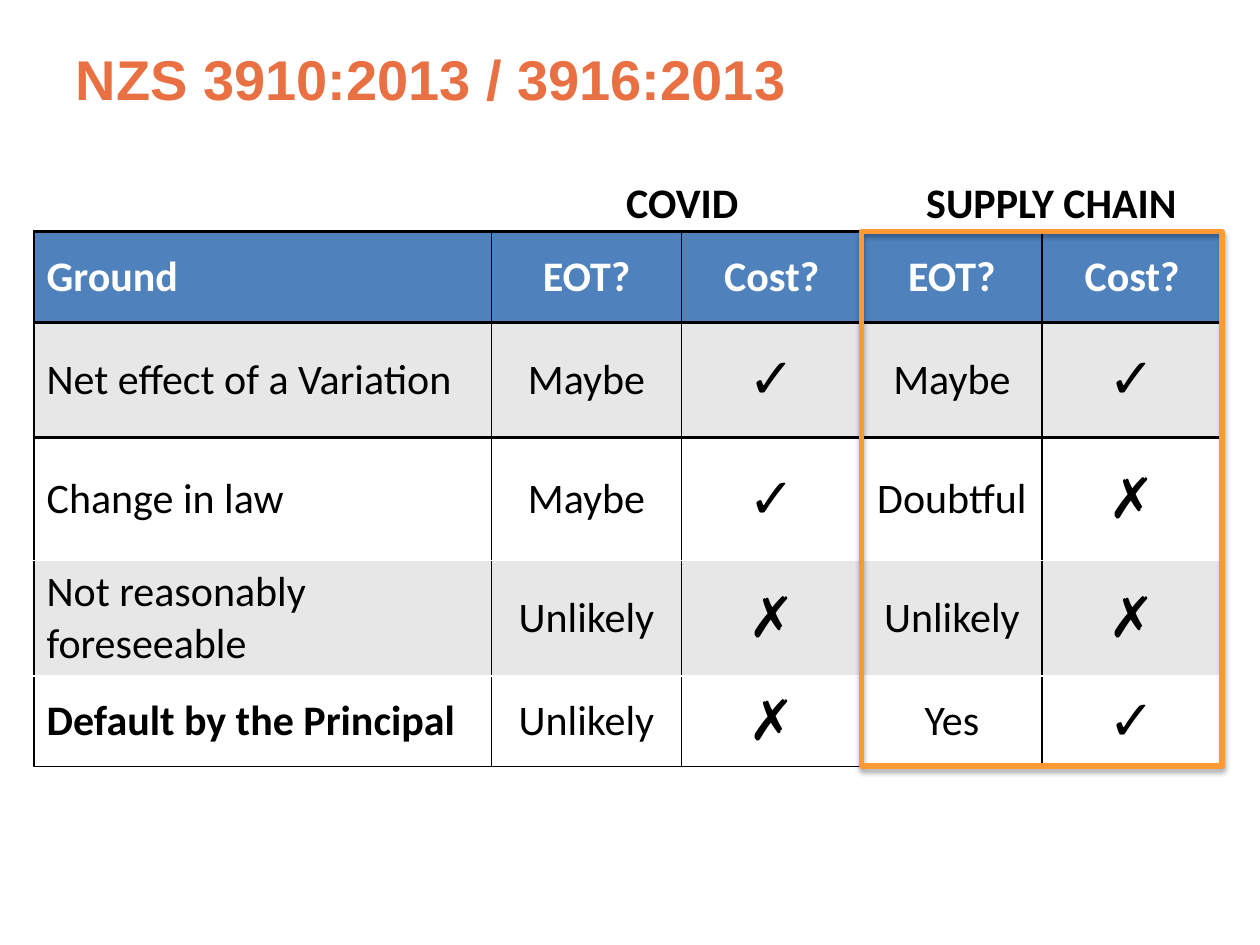
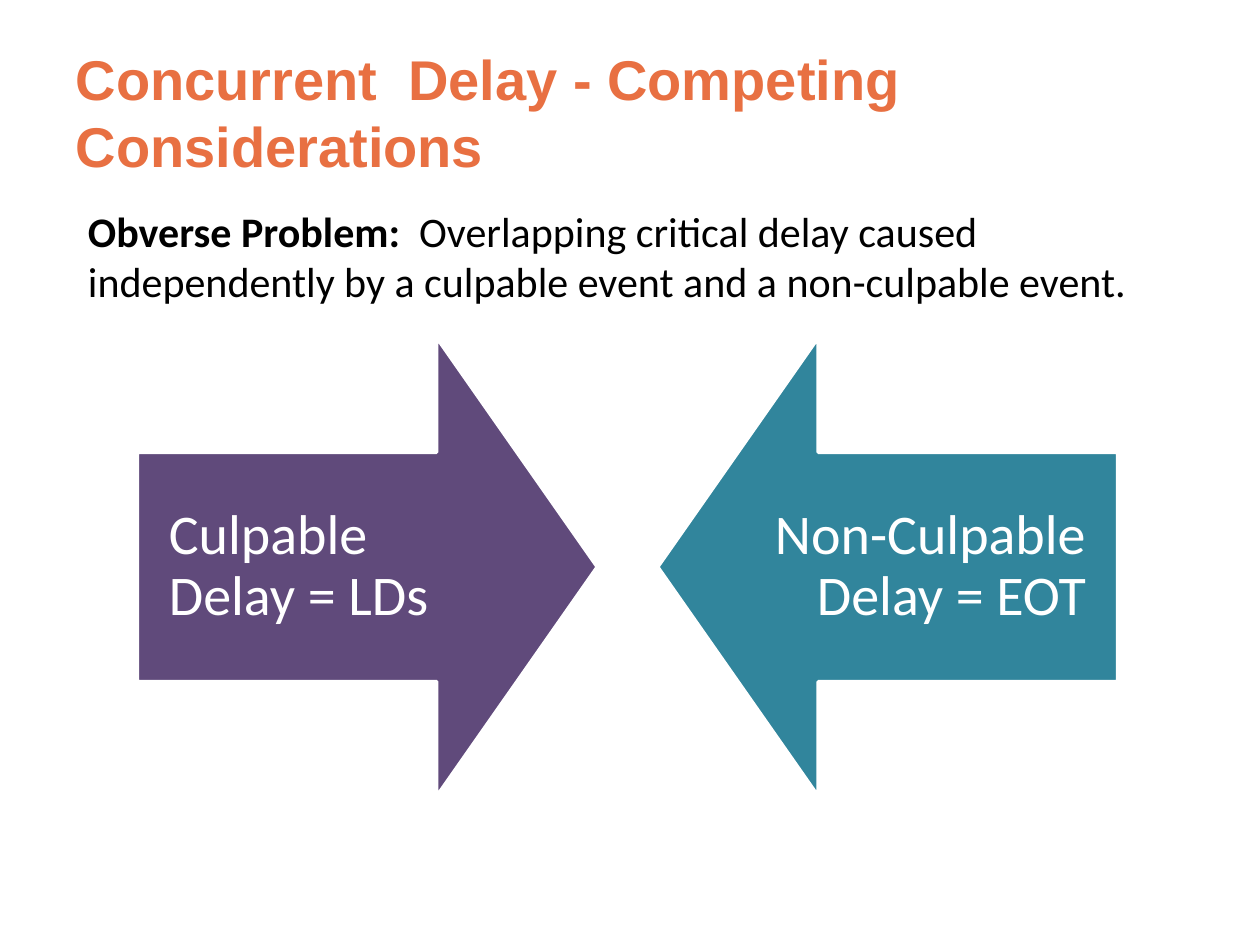
from lxml.etree import SubElement
from pptx import Presentation
from pptx.dml.color import RGBColor
from pptx.enum.shapes import MSO_SHAPE
from pptx.enum.text import MSO_ANCHOR, MSO_AUTO_SIZE, PP_ALIGN
from pptx.oxml.ns import qn
from pptx.util import Inches, Pt

ORANGE = RGBColor(0xE8, 0x70, 0x42)
FRAME_ORANGE = RGBColor(0xFF, 0x99, 0x33)
BLUE = RGBColor(0x4F, 0x81, 0xBD)
GREY = RGBColor(0xE7, 0xE7, 0xE7)
PURPLE = RGBColor(0x60, 0x4A, 0x7B)
TEAL = RGBColor(0x31, 0x85, 0x9C)
BLACK = RGBColor(0x00, 0x00, 0x00)
WHITE = RGBColor(0xFF, 0xFF, 0xFF)

presentation = Presentation()
presentation.slide_width = Inches(10)
presentation.slide_height = Inches(7.5)
COLUMN = presentation.slide_width // 100
ROW = presentation.slide_height // 75


def add_run(paragraph, text, size, color, bold=False, font="Calibri"):
    run = paragraph.add_run()
    run.text = text
    run.font.name = font
    run.font.size = Pt(size)
    run.font.bold = bold
    run.font.color.rgb = color


def add_titled_slide(text, rows):
    slide = presentation.slides.add_slide(presentation.slide_layouts[5])
    title = slide.shapes.title
    title.left, title.top = 5 * COLUMN, 3 * ROW
    title.width, title.height = 90 * COLUMN, int(rows * ROW)
    frame = title.text_frame
    frame.auto_size = MSO_AUTO_SIZE.NONE
    frame.vertical_anchor = MSO_ANCHOR.TOP
    frame.paragraphs[0].alignment = PP_ALIGN.LEFT
    add_run(frame.paragraphs[0], text, 32, ORANGE, True, "Arial")
    return slide


slide = add_titled_slide("NZS 3910:2013 / 3916:2013", 12.5)

grounds = [
    ("Ground", "EOT?", "Cost?", "EOT?", "Cost?"),
    ("Net effect of a Variation", "Maybe", "✓", "Maybe", "✓"),
    ("Change in law", "Maybe", "✓", "Doubtful", "✗"),
    ("Not reasonably foreseeable", "Unlikely", "✗", "Unlikely", "✗"),
    ("Default by the Principal", "Unlikely", "✗", "Yes", "✓"),
]
column_widths = [36.3, 15.1, 14.3, 14.3, 14.3]
row_heights = [7.2, 9.1, 9.8, 9.1, 7.2]
table_left, table_top = int(2.7 * COLUMN), int(18.4 * ROW)
table_width, table_height = int(sum(column_widths) * COLUMN), int(sum(row_heights) * ROW)
table = slide.shapes.add_table(
    len(grounds), len(column_widths), table_left, table_top, table_width, table_height
).table
table.horz_banding = False
for column, width in zip(table.columns, column_widths):
    column.width = int(width * COLUMN)
for row, height in zip(table.rows, row_heights):
    row.height = int(height * ROW)

last_row = len(grounds) - 1
for row_index, texts in enumerate(grounds):
    is_header = row_index == 0
    borders = {"a:lnL": 1, "a:lnR": 1}
    if is_header:
        borders.update({"a:lnT": 2, "a:lnB": 2})
    elif row_index == 1:
        borders["a:lnT"] = 2
    elif row_index == last_row:
        borders["a:lnB"] = 1
    for column_index, text in enumerate(texts):
        cell = table.cell(row_index, column_index)
        properties = cell._tc.get_or_add_tcPr()
        for tag, width in borders.items():
            line = SubElement(properties, qn(tag), w=str(Pt(width)))
            SubElement(SubElement(line, qn("a:solidFill")), qn("a:srgbClr"), val=str(BLACK))
        cell.fill.solid()
        cell.fill.fore_color.rgb = BLUE if is_header else GREY if row_index % 2 else WHITE
        cell.vertical_anchor = MSO_ANCHOR.MIDDLE
        paragraph = cell.text_frame.paragraphs[0]
        paragraph.alignment = PP_ALIGN.CENTER if column_index else PP_ALIGN.LEFT
        bold = is_header or (row_index == last_row and column_index == 0)
        size = 32 if text in "✓✗" else 24
        add_run(paragraph, text, size, WHITE if is_header else BLACK, bold)

for heading, left in (("COVID", 41), ("SUPPLY CHAIN", 70.3)):
    box = slide.shapes.add_textbox(
        int(left * COLUMN), int(13.5 * ROW), int(26.3 * COLUMN), 5 * ROW
    )
    box.text_frame.word_wrap = True
    paragraph = box.text_frame.paragraphs[0]
    paragraph.alignment = PP_ALIGN.CENTER
    add_run(paragraph, heading, 24, BLACK, True)

frame_width = int(sum(column_widths[3:]) * COLUMN)
supply_frame = slide.shapes.add_shape(
    MSO_SHAPE.RECTANGLE,
    table_left + table_width - frame_width, table_top, frame_width, table_height,
)
supply_frame.fill.background()
supply_frame.line.color.rgb = FRAME_ORANGE
supply_frame.line.width = Pt(3)
supply_frame.shadow.inherit = False
effects = supply_frame._element.spPr.find(qn("a:effectLst"))
shadow = SubElement(
    effects, qn("a:outerShdw"),
    blurRad=str(Pt(3.1)), dist=str(Pt(1.8)), dir="5400000", rotWithShape="0",
)
shadow_color = SubElement(shadow, qn("a:srgbClr"), val=str(BLACK))
SubElement(shadow_color, qn("a:alpha"), val="35000")

slide = add_titled_slide("Concurrent  Delay - Competing Considerations", 8.3)

delays = [
    ("Culpable Delay = LDs", MSO_SHAPE.RIGHT_ARROW, 10.9, PURPLE, PP_ALIGN.LEFT),
    ("Non-Culpable Delay = EOT", MSO_SHAPE.LEFT_ARROW, 52.2, TEAL, PP_ALIGN.RIGHT),
]
for text, arrow_kind, left, color, alignment in delays:
    arrow = slide.shapes.add_shape(
        arrow_kind, int(left * COLUMN), int(26.8 * ROW), int(36.5 * COLUMN), int(36.4 * ROW)
    )
    arrow.adjustments[0] = 0.5
    arrow.adjustments[1] = 0.35
    arrow.shadow.inherit = False
    arrow.fill.solid()
    arrow.fill.fore_color.rgb = color
    arrow.line.color.rgb = WHITE
    arrow.line.width = Pt(2)
    frame = arrow.text_frame
    frame.word_wrap = True
    frame.vertical_anchor = MSO_ANCHOR.MIDDLE
    frame.margin_left = frame.margin_right = int(2.5 * COLUMN)
    frame.margin_top = frame.margin_bottom = int(2.5 * ROW)
    paragraph = frame.paragraphs[0]
    paragraph.alignment = alignment
    paragraph.line_spacing = 0.9
    add_run(paragraph, text, 32, WHITE)

problem = slide.shapes.add_textbox(
    6 * COLUMN, int(15.8 * ROW), int(85.7 * COLUMN), int(9.1 * ROW)
)
problem.text_frame.word_wrap = True
paragraph = problem.text_frame.paragraphs[0]
add_run(paragraph, "Obverse Problem:  ", 24, BLACK, True)
add_run(
    paragraph,
    "Overlapping critical delay caused independently by a culpable event "
    "and a non-culpable event.",
    24, BLACK,
)

presentation.save("out.pptx")
